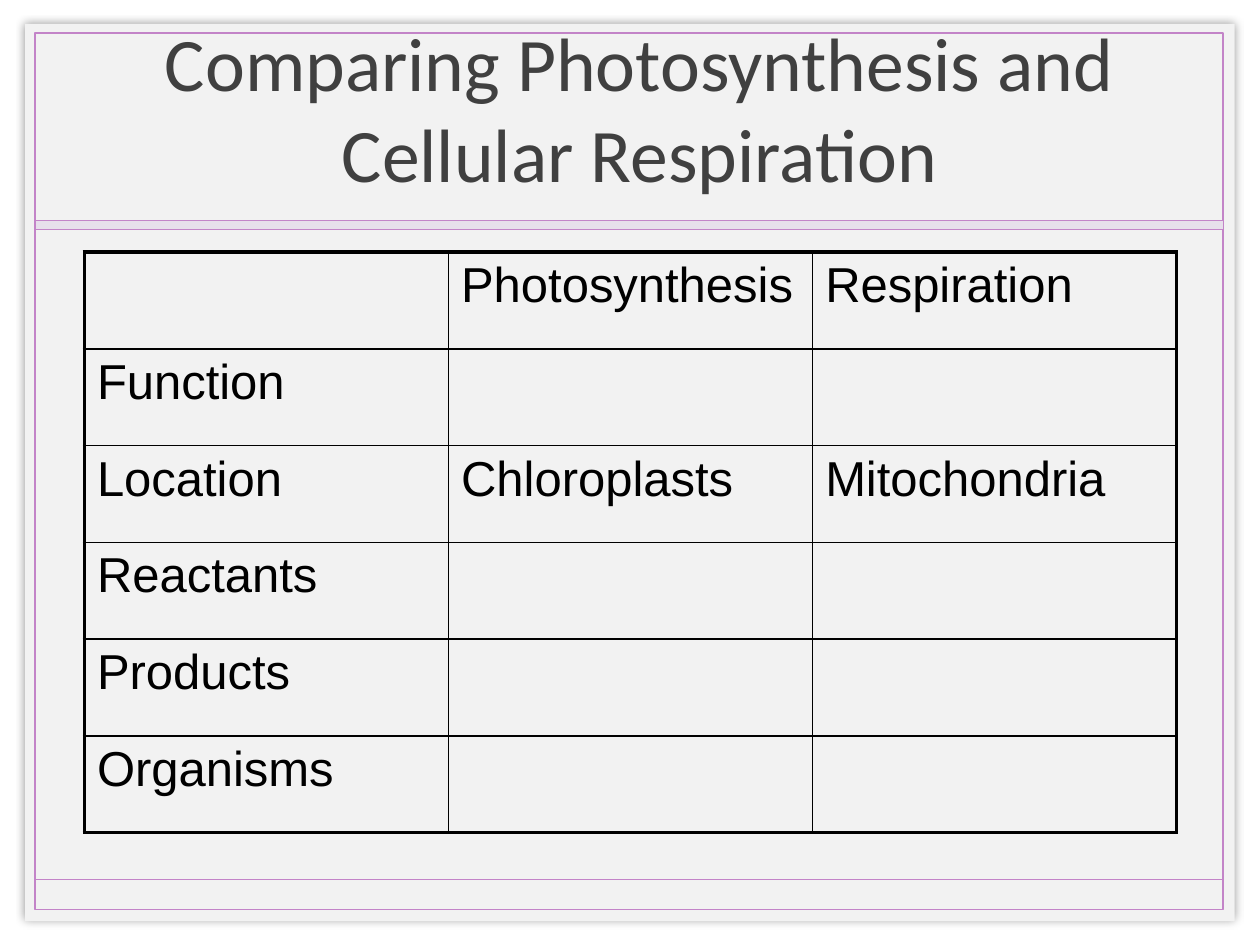
import pptx
import pptx.util
import pptx.dml.color
import pptx.enum.shapes
import pptx.enum.text
import pptx.oxml
from pptx.util import Inches

TITLE = "Comparing Photosynthesis and Cellular Respiration"
ROWS = [
    ("", "Photosynthesis", "Respiration"),
    ("Function", "", ""),
    ("Location", "Chloroplasts", "Mitochondria"),
    ("Reactants", "", ""),
    ("Products", "", ""),
    ("Organisms", "", ""),
]
TITLE_FONT = {"name": "Calibri", "size": pptx.util.Pt(43.2), "color": "404040"}
CELL_FONT = {"name": "Arial", "size": pptx.util.Pt(28), "color": "000000"}
# left, top, width, height, fill, line colour, line width
PANELS = [
    (0.2, 0.19, 9.6, 7.12, "F2F2F2", None, 0),
    (0.28, 0.26, 9.43, 6.96, None, "C384C8", 1),
    (0.28, 1.75, 9.43, 0.07, "E7DFEB", "C384C8", 0.25),
]
FOOTER_LINE = (0.28, 6.98, 9.71, 6.98)
TABLE_AREA = (0.67, 2, 8.67, 4.61)
TITLE_AREA = (0.35, 0.06, 9.45, 1.57)
OUTER, INNER = 2.25, 1
NAMESPACE = 'xmlns:a="http://schemas.openxmlformats.org/drawingml/2006/main"'


def rgb(value):
    return pptx.dml.color.RGBColor.from_string(value)


def inches(values):
    return [Inches(value) for value in values]


def write(frame, text, style):
    span = frame.paragraphs[0].add_run()
    span.text = text
    for key, value in style.items():
        if key == "color":
            span.font.color.rgb = rgb(value)
        else:
            setattr(span.font, key, value)


def set_line(line, color, width):
    line.color.rgb = rgb(color)
    line.width = pptx.util.Pt(width)


def add_panel(page, left, top, width, height, fill, color, weight):
    panel = page.shapes.add_shape(
        pptx.enum.shapes.MSO_SHAPE.RECTANGLE, *inches((left, top, width, height)))
    panel.shadow.inherit = False
    if fill:
        panel.fill.solid()
        panel.fill.fore_color.rgb = rgb(fill)
    else:
        panel.fill.background()
    if color:
        set_line(panel.line, color, weight)
    else:
        panel.line.fill.background()
    return panel


def add_border(cell, side, width):
    cell._tc.get_or_add_tcPr().append(pptx.oxml.parse_xml(
        f'<a:ln{side} {NAMESPACE} w="{pptx.util.Pt(width)}">'
        f'<a:solidFill><a:srgbClr val="000000"/></a:solidFill></a:ln{side}>'))


deck = pptx.Presentation()
deck.slide_width, deck.slide_height = Inches(10), Inches(7.5)
page = deck.slides.add_slide(deck.slide_layouts[6])

# Paper with a soft shadow, frame and title band
paper, frame, band = [add_panel(page, *panel) for panel in PANELS]
paper._element.spPr.find(pptx.oxml.ns.qn("a:effectLst")).append(pptx.oxml.parse_xml(
    f'<a:outerShdw {NAMESPACE} blurRad="{pptx.util.Pt(5)}" dist="0" dir="0">'
    '<a:srgbClr val="000000"><a:alpha val="40000"/></a:srgbClr></a:outerShdw>'))

# Footer line
footer = page.shapes.add_connector(
    pptx.enum.shapes.MSO_CONNECTOR.STRAIGHT, *inches(FOOTER_LINE))
set_line(footer.line, "C384C8", 1)
footer._element.spPr.append(pptx.oxml.parse_xml(f"<a:effectLst {NAMESPACE}/>"))

# Comparison table: thick outer edge, thin inner rules
last_row, last_column = len(ROWS) - 1, len(ROWS[0]) - 1
table = page.shapes.add_table(len(ROWS), len(ROWS[0]), *inches(TABLE_AREA)).table
table.first_row = table.horz_banding = False
for r, row in enumerate(ROWS):
    for c, text in enumerate(row):
        cell = table.cell(r, c)
        edges = {"L": c == 0, "R": c == last_column, "T": r == 0, "B": r == last_row}
        for side, is_outer in edges.items():
            add_border(cell, side, OUTER if is_outer else INNER)
        cell.fill.background()
        if text:
            write(cell.text_frame, text, CELL_FONT)

# Title
box = page.shapes.add_textbox(*inches(TITLE_AREA))
box.text_frame.word_wrap = True
box.text_frame.vertical_anchor = pptx.enum.text.MSO_ANCHOR.MIDDLE
box.text_frame.paragraphs[0].alignment = pptx.enum.text.PP_ALIGN.CENTER
write(box.text_frame, TITLE, TITLE_FONT)

deck.save("out.pptx")
